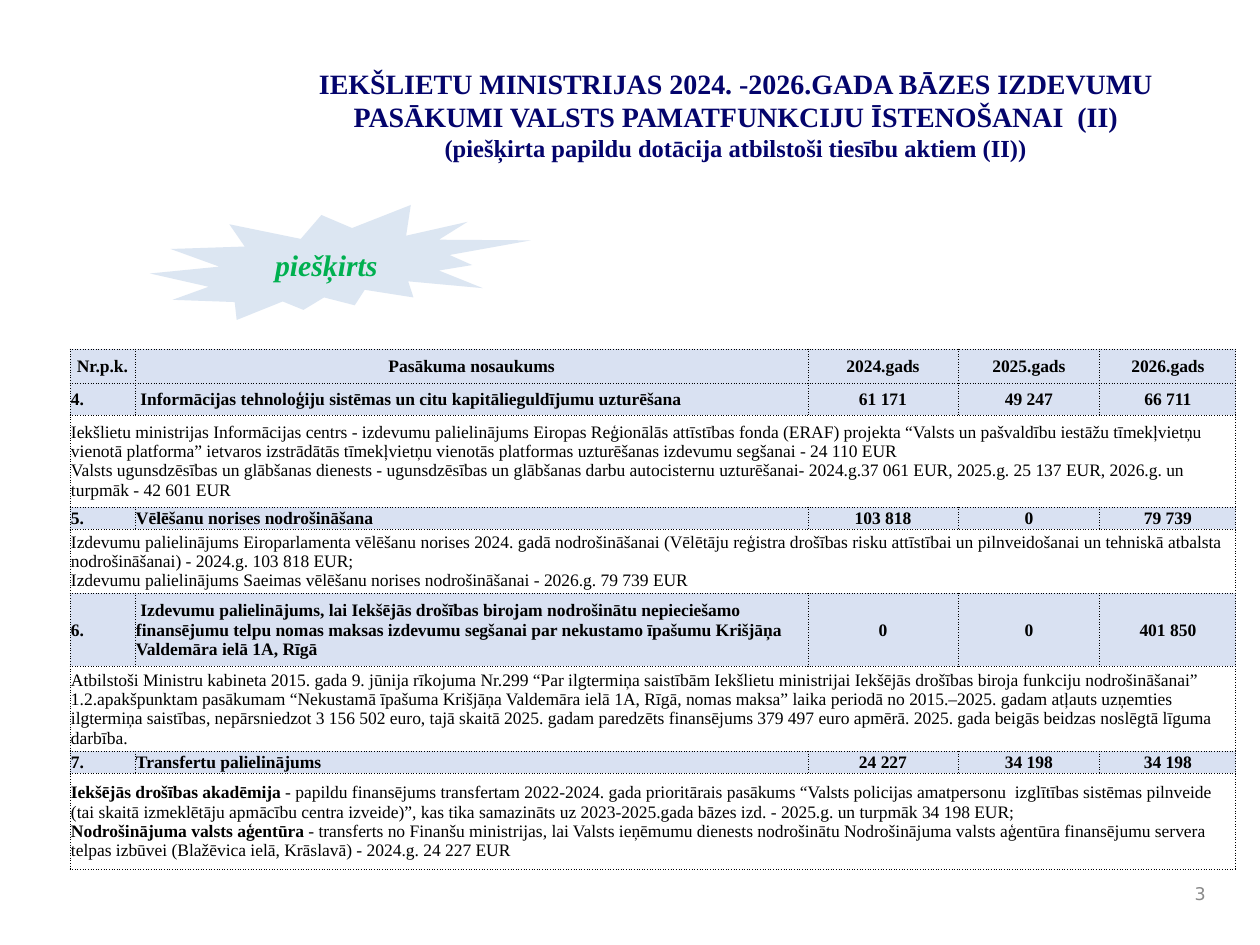
from dataclasses import dataclass

from lxml import etree
from pptx import Presentation, util as u
from pptx.dml.color import RGBColor
from pptx.enum import shapes, text
from pptx.oxml import parse_xml
from pptx.oxml.ns import nsdecls, qn

LEFT, MID, RIGHT = text.PP_ALIGN.LEFT, text.PP_ALIGN.CENTER, text.PP_ALIGN.RIGHT


@dataclass
class Theme:
    serif: str = "Times New Roman"
    sans: str = "DejaVu Sans"
    navy: str = "04046C"
    green: str = "00B050"
    grey: str = "898989"
    black: str = "000000"
    band: str = "D9E1F2"
    pale: str = "DCE6F2"
    head: int = 16
    sub: int = 14
    seal: int = 17
    body: int = 10


def px(n):
    return u.Emu(round(n * 914400 / 126))


class Deck:
    def __init__(self, theme):
        self.theme = theme
        self.prs = Presentation()
        self.prs.slide_width, self.prs.slide_height = px(1260), px(945)
        self.slide = self.prs.slides.add_slide(self.prs.slide_layouts[5])

    def style(self, run, size, color, bold=False, italic=False, face=None):
        font = run.font
        font.name, font.size = face or self.theme.serif, u.Pt(size)
        font.bold, font.italic = bold, italic
        font.color.rgb = RGBColor.from_string(color)

    def title(self, box, lines):
        t = self.theme
        shape = self.slide.shapes.title
        shape.left, shape.top, shape.width, shape.height = map(px, box)
        frame = shape.text_frame
        frame.text = "\n".join(lines)
        frame.vertical_anchor = text.MSO_ANCHOR.TOP
        frame.auto_size = text.MSO_AUTO_SIZE.NONE
        for para, size in zip(frame.paragraphs, (t.head, t.sub)):
            para.alignment = MID
            self.style(para.runs[0], size, t.navy, bold=True)

    def number(self, box, label):
        frame = self.slide.shapes.add_textbox(*map(px, box)).text_frame
        frame.word_wrap = True
        frame.vertical_anchor = text.MSO_ANCHOR.MIDDLE
        frame.text = label
        para = frame.paragraphs[0]
        para.alignment = RIGHT
        self.style(para.runs[0], self.theme.body, self.theme.grey, face=self.theme.sans)

    def burst(self, box, label):
        t = self.theme
        kind = shapes.MSO_SHAPE.EXPLOSION2
        shape = self.slide.shapes.add_shape(kind, *map(px, box))
        shape.shadow.inherit = False
        shape.fill.solid()
        shape.fill.fore_color.rgb = RGBColor.from_string(t.pale)
        shape.line.fill.background()
        frame = shape.text_frame
        frame.text = label
        frame.vertical_anchor = text.MSO_ANCHOR.MIDDLE
        frame.paragraphs[0].alignment = MID
        self.style(frame.paragraphs[0].runs[0], t.seal, t.green, bold=True, italic=True)

    def border(self, cell):
        props = cell._tc.get_or_add_tcPr()
        for side in "LRTB":
            line = parse_xml(f'<a:ln{side} {nsdecls("a")} w="6350"/>')
            fill = etree.SubElement(line, qn("a:solidFill"))
            etree.SubElement(fill, qn("a:srgbClr"), val=self.theme.black)
            etree.SubElement(line, qn("a:prstDash"), val="sysDot")
            props.append(line)

    def cell(self, cell, align, band):
        self.border(cell)
        cell.margin_left = cell.margin_right = cell.margin_top = px(1)
        cell.margin_bottom = 0
        cell.vertical_anchor = text.MSO_ANCHOR.MIDDLE
        cell.text_frame.paragraphs[0].alignment = align
        if band:
            cell.fill.solid()
            cell.fill.fore_color.rgb = RGBColor.from_string(self.theme.band)
        else:
            cell.fill.background()

    def label(self, cell, words, bold):
        """Fill a cell; the part of a line before a bar is bold."""
        para = cell.text_frame.paragraphs[0]
        for i, line in enumerate(words.split("\n")):
            if i:
                para.add_line_break()
            lead, _, rest = line.rpartition("|")
            for part, heavy in ((lead, True), (rest, bold)):
                if part:
                    run = para.add_run()
                    run.text = part
                    self.style(run, self.theme.body, self.theme.black, heavy)

    def table(self, left, top, cols, highs, rows):
        box = map(px, (left, top, sum(cols), sum(highs)))
        grid = self.slide.shapes.add_table(len(rows), len(cols), *box).table
        grid.first_row = grid.horz_banding = False
        for col, wide in zip(grid.columns, cols):
            col.width = px(wide)
        for r, (row, high) in enumerate(zip(rows, highs)):
            grid.rows[r].height = px(high)
            band = not isinstance(row, str)
            for c in range(len(cols)):
                align = MID if band and (r == 0 or c > 1) else LEFT
                self.cell(grid.cell(r, c), align, band)
                if band:
                    self.label(grid.cell(r, c), row[c], True)
            if not band:
                grid.cell(r, 0).merge(grid.cell(r, len(cols) - 1))
                self.label(grid.cell(r, 0), row, False)


# A tuple is a shaded row of five cells, a string a note across the table
ROWS = [
    ("Nr.p.k.", "Pasākuma nosaukums", "2024.gads", "2025.gads", "2026.gads"),
    ("4.", " Informācijas tehnoloģiju sistēmas un citu kapitālieguldījumu uzturēšana",
     "61 171", "49 247", "66 711"),
    "Iekšlietu ministrijas Informācijas centrs - izdevumu palielinājums Eiropas Reģionālās "
    "attīstības fonda (ERAF) projekta “Valsts un pašvaldību iestāžu tīmekļvietņu vienotā "
    "platforma” ietvaros izstrādātās tīmekļvietņu vienotās platformas uzturēšanas izdevumu "
    "segšanai - 24 110 EUR\n"
    "Valsts ugunsdzēsības un glābšanas dienests - ugunsdzēsības un glābšanas darbu "
    "autocisternu uzturēšanai- 2024.g.37 061 EUR, 2025.g. 25 137 EUR, 2026.g. un turpmāk "
    "- 42 601 EUR",
    ("5.", "Vēlēšanu norises nodrošināšana", "103 818", "0", "79 739"),
    "Izdevumu palielinājums Eiroparlamenta vēlēšanu norises 2024. gadā nodrošināšanai "
    "(Vēlētāju reģistra drošības risku attīstībai un pilnveidošanai un tehniskā atbalsta "
    "nodrošināšanai) - 2024.g. 103 818 EUR;\n"
    "Izdevumu palielinājums Saeimas vēlēšanu norises nodrošināšanai - 2026.g. 79 739 EUR",
    ("6.", " Izdevumu palielinājums, lai Iekšējās drošības birojam nodrošinātu nepieciešamo "
     "finansējumu telpu nomas maksas izdevumu segšanai par nekustamo īpašumu Krišjāņa "
     "Valdemāra ielā 1A, Rīgā", "0", "0", "401 850"),
    "Atbilstoši Ministru kabineta 2015. gada 9. jūnija rīkojuma Nr.299 “Par ilgtermiņa "
    "saistībām Iekšlietu ministrijai Iekšējās drošības biroja funkciju nodrošināšanai” "
    "1.2.apakšpunktam pasākumam “Nekustamā īpašuma Krišjāņa Valdemāra ielā 1A, Rīgā, nomas "
    "maksa” laika periodā no 2015.–2025. gadam atļauts uzņemties ilgtermiņa saistības, "
    "nepārsniedzot 3 156 502 euro, tajā skaitā 2025. gadam paredzēts finansējums 379 497 "
    "euro apmērā. 2025. gada beigās beidzas noslēgtā līguma darbība.",
    ("7.", "Transfertu palielinājums", "24 227", "34 198", "34 198"),
    "Iekšējās drošības akadēmija| - papildu finansējums transfertam 2022-2024. gada "
    "prioritārais pasākums “Valsts policijas amatpersonu  izglītības sistēmas pilnveide "
    "(tai skaitā izmeklētāju apmācību centra izveide)”, kas tika samazināts uz "
    "2023-2025.gada bāzes izd. - 2025.g. un turpmāk 34 198 EUR;\n"
    "Nodrošinājuma valsts aģentūra |- transferts no Finanšu ministrijas, lai Valsts ieņēmumu "
    "dienests nodrošinātu Nodrošinājuma valsts aģentūra finansējumu servera telpas izbūvei "
    "(Blažēvica ielā, Krāslavā) - 2024.g. 24 227 EUR",
]


def main():
    deck = Deck(Theme())
    # Heading and page number
    deck.title((236, 60, 1000, 117), (
        "IEKŠLIETU MINISTRIJAS 2024. -2026.GADA BĀZES IZDEVUMU PASĀKUMI VALSTS "
        "PAMATFUNKCIJU ĪSTENOŠANAI  (II)",
        "(piešķirta papildu dotācija atbilstoši tiesību aktiem (II))"))
    deck.number((1176, 872, 42, 42), "3")
    # Funding measures
    deck.table(70, 349, (65, 673, 150, 142, 136),
               (34, 32, 92, 20, 59, 73, 84, 21, 96), ROWS)
    # Status badge
    deck.burst((150, 205, 381, 115), "piešķirts")
    deck.prs.save("out.pptx")


if __name__ == "__main__":
    main()
